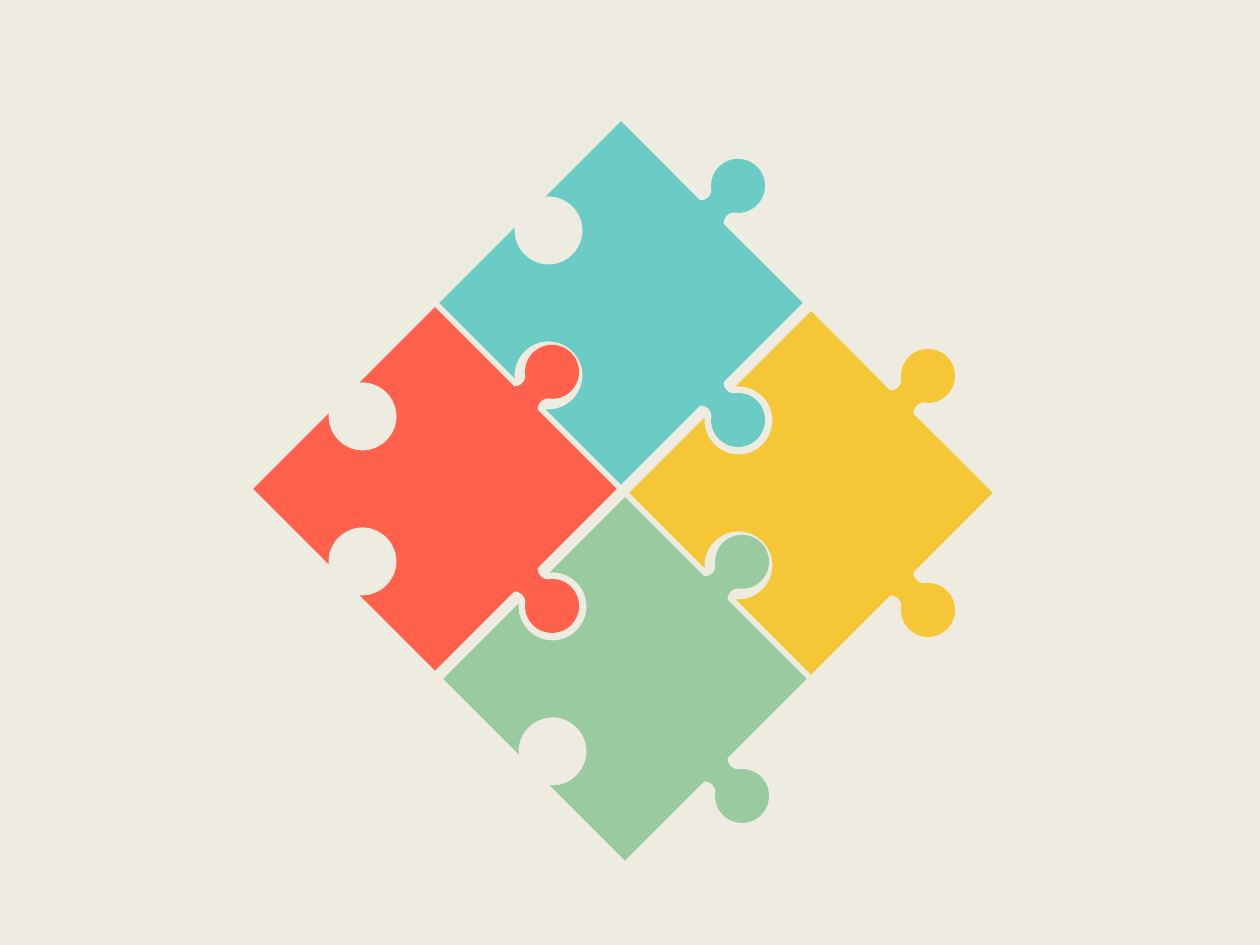
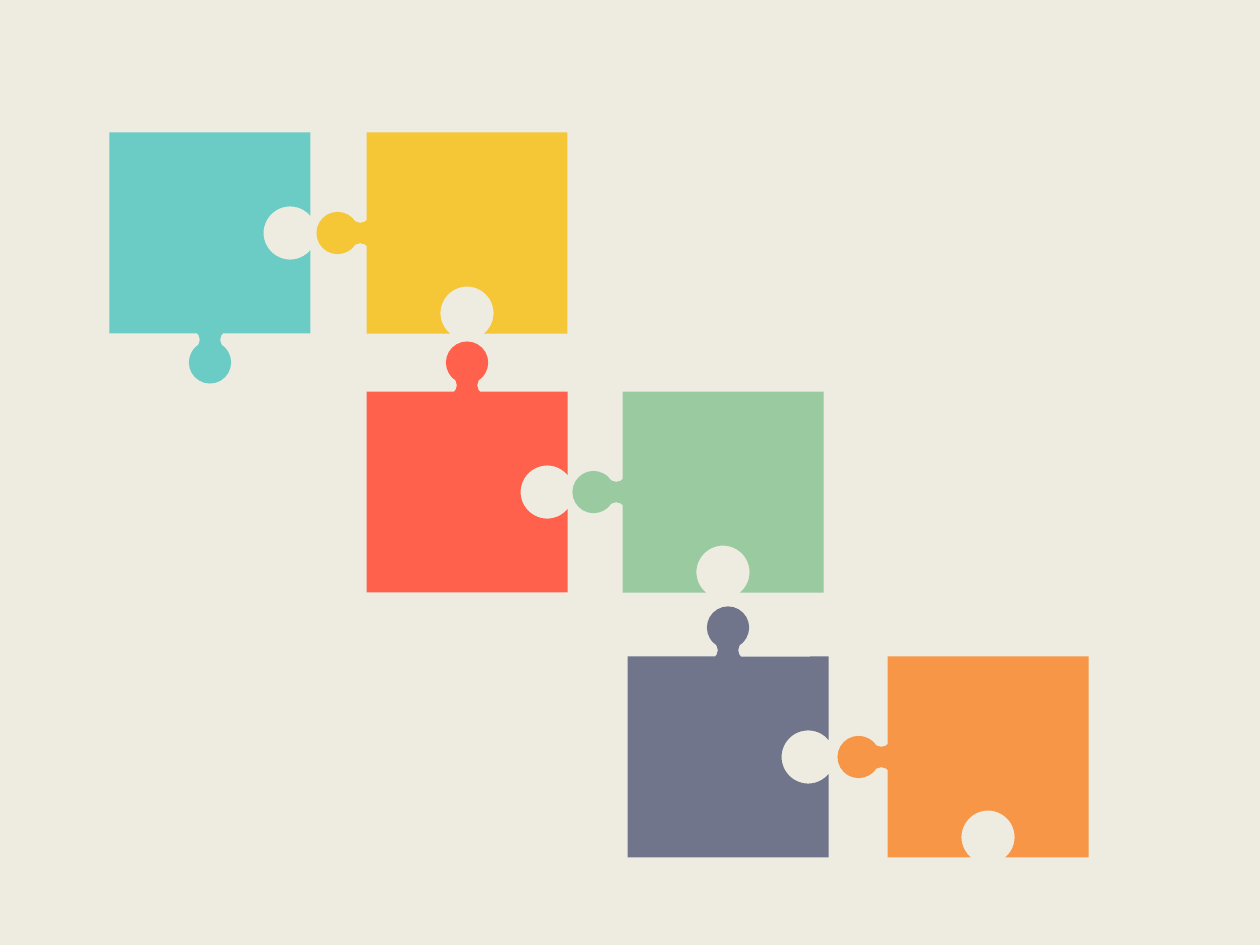
from math import cos, radians, sin

from lxml.etree import SubElement
from pptx import Presentation
from pptx.dml.color import RGBColor
from pptx.oxml.ns import qn
from pptx.util import Emu, Inches

PX = Inches(1) / 126

CREAM = RGBColor(0xEE, 0xEC, 0xE1)
TEAL = RGBColor(0x6B, 0xCB, 0xC5)
YELLOW = RGBColor(0xF5, 0xC6, 0x36)
RED = RGBColor(0xFF, 0x61, 0x4C)
GREEN = RGBColor(0x9A, 0xCA, 0x9F)
SLATE = RGBColor(0x70, 0x75, 0x8C)
ORANGE = RGBColor(0xF7, 0x96, 0x46)

# Arcs on a side, as (along, outward, radius, start degree, end degree).
FLAT = ()
TAB = ((-24, 8, 11, -47, 47), (0, 37, 27, 231, -51), (24, 8, 11, 133, 227))
SOCKET = ((0, -26, 34, 130, 410),)
BODY = 257  # side length in which the arcs are measured

# Sides run clockwise from the top, before the piece is turned.
INTERLOCKING = (TAB, TAB, SOCKET, SOCKET)
TAB_BELOW = (FLAT, SOCKET, TAB, FLAT)
TAB_BELOW_MIRRORED = (FLAT, FLAT, TAB, SOCKET)
TAB_ABOVE = (TAB, SOCKET, FLAT, FLAT)
TAB_ABOVE_MIRRORED = (TAB, FLAT, FLAT, SOCKET)

# Each puzzle: body side, then pieces as (centre x, centre y, turn, sides, colour).
PUZZLES = [
    (257, [
        (621, 303, 45, INTERLOCKING, TEAL),
        (811, 493, 45, INTERLOCKING, YELLOW),
        (435, 489, 45, INTERLOCKING, RED),
        (625, 679, 45, INTERLOCKING, GREEN),
    ]),
    (201, [
        (210, 233, 0, TAB_BELOW, TEAL),
        (467, 233, 90, TAB_BELOW, YELLOW),
        (467, 492, 180, TAB_BELOW_MIRRORED, RED),
        (723, 492, 270, TAB_ABOVE_MIRRORED, GREEN),
        (728, 757, 0, TAB_ABOVE, SLATE),
        (988, 757, 90, TAB_BELOW, ORANGE),
    ]),
]


def turned(x, y, degrees):
    """Turn a point clockwise around the body centre."""
    c, s = cos(radians(degrees)), sin(radians(degrees))
    return x * c - y * s, x * s + y * c


def arc_points(along, outward, radius, start, end):
    """Start, middle and end of an arc."""
    for degrees in (start, (start + end) / 2, end):
        angle = radians(degrees)
        yield along + radius * cos(angle), outward + radius * sin(angle)


def piece_outline(sides, scale):
    """Points around the body centre, and the arcs keyed by their middle point's index."""
    points, arcs_at = [], {}
    for index, arcs in enumerate(sides):
        profile = [(-BODY / 2, 0)]
        for along, outward, radius, start, end in arcs:
            arcs_at[len(points) + len(profile) + 1] = (
                round(radius * scale), (90 * index - start) % 360, start - end)
            profile += arc_points(along, outward, radius, start, end)
        for along, outward in profile:
            x, y = turned(along, -BODY / 2 - outward, 90 * index)
            points.append((round(x * scale), round(y * scale)))
    return points, arcs_at


def round_corners(piece, arcs_at):
    """Replace the two chords of each arc by one true arc."""
    chords = list(piece._element.iter(qn("a:lnTo")))
    for middle, (radius, start, swing) in arcs_at.items():
        first, second = chords[middle - 1:middle + 1]
        outline = first.getparent()
        arc = SubElement(outline, qn("a:arcTo"), wR=str(radius), hR=str(radius),
                         stAng=str(start * 60000), swAng=str(swing * 60000))
        outline.replace(first, arc)
        outline.remove(second)


def add_piece(slide, side_length, x, y, turn, sides, colour):
    points, arcs_at = piece_outline(sides, PX * side_length / BODY)
    builder = slide.shapes.build_freeform(*points[0], scale=1.0)
    builder.add_line_segments(points[1:], close=True)
    piece = builder.convert_to_shape()
    round_corners(piece, arcs_at)
    # Tabs move the box centre away from the body centre.
    dx, dy = turned(piece.left + piece.width / 2, piece.top + piece.height / 2, turn)
    piece.left = Emu(round(x * PX + dx - piece.width / 2))
    piece.top = Emu(round(y * PX + dy - piece.height / 2))
    piece.rotation = turn
    piece.fill.solid()
    piece.fill.fore_color.rgb = colour
    piece.line.fill.background()
    piece.shadow.inherit = False


def main():
    deck = Presentation()
    deck.slide_width, deck.slide_height = Inches(10), Inches(7.5)
    for side_length, pieces in PUZZLES:
        slide = deck.slides.add_slide(deck.slide_layouts[6])
        slide.background.fill.solid()
        slide.background.fill.fore_color.rgb = CREAM
        for piece in pieces:
            add_piece(slide, side_length, *piece)
    deck.save("out.pptx")


if __name__ == "__main__":
    main()
